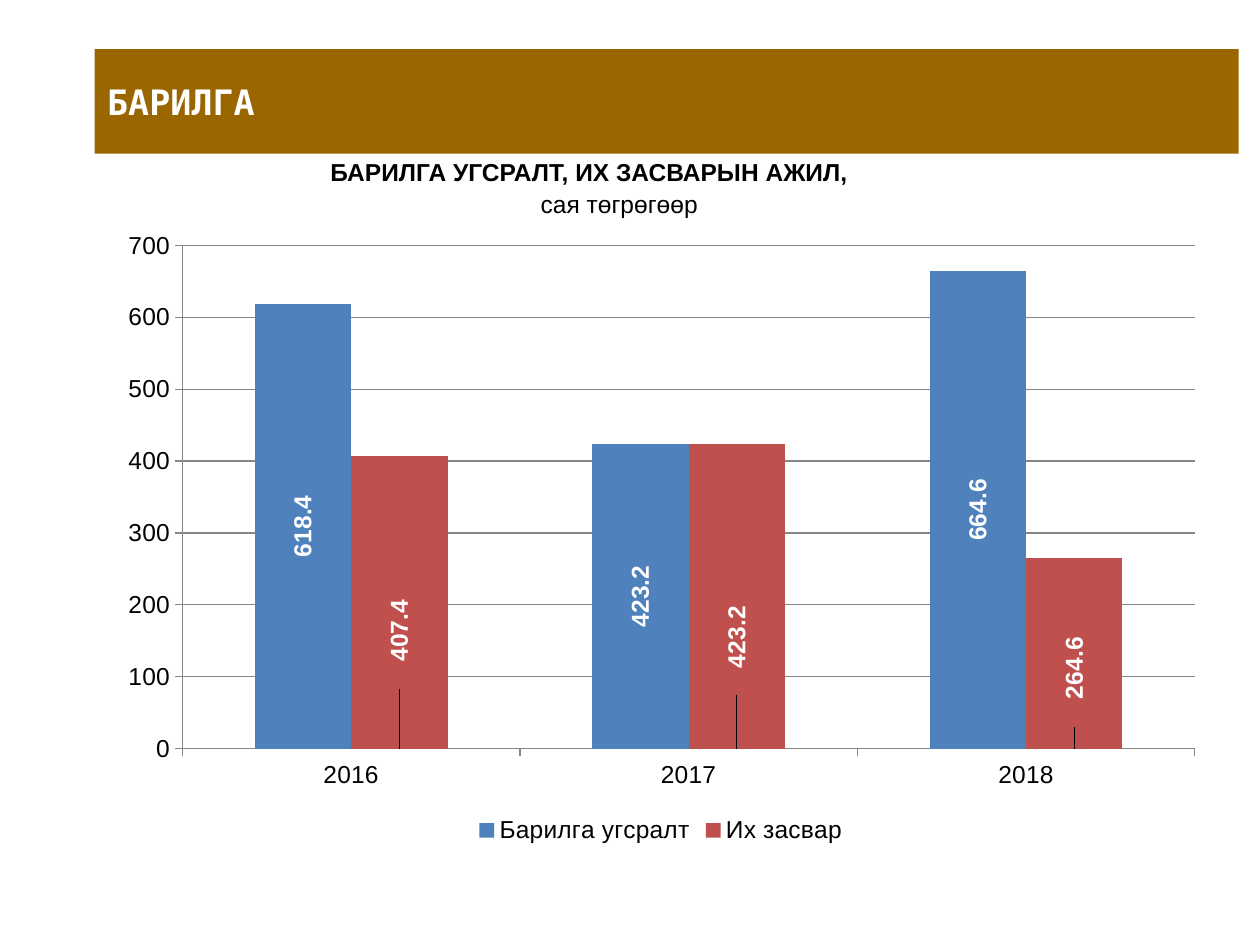
from lxml.etree import SubElement
from pptx import Presentation
from pptx.chart.data import CategoryChartData
from pptx.dml.color import RGBColor
from pptx.enum.chart import XL_CHART_TYPE, XL_LABEL_POSITION, XL_LEGEND_POSITION, XL_TICK_MARK
from pptx.enum.text import MSO_ANCHOR, MSO_AUTO_SIZE, PP_ALIGN
from pptx.oxml import parse_xml
from pptx.oxml.ns import nsdecls, qn
from pptx.util import Inches, Pt

COLORS = {"bar": "996600", "white": "FFFFFF", "black": "000000", "grid": "868686"}
TITLE = "БАРИЛГА"
SUBTITLE = [("БАРИЛГА УГСРАЛТ, ИХ ЗАСВАРЫН АЖИЛ,", True, 0.48), ("сая төгрөгөөр", False, 0)]
YEARS = ["2016", "2017", "2018"]
SERIES = [
    {"name": "Барилга угсралт", "values": [618.4, 423.2, 664.6], "color": "4F81BD",
     "position": XL_LABEL_POSITION.CENTER, "shifts": [0, 0, 0]},
    {"name": "Их засвар", "values": [407.4, 423.2, 264.6], "color": "C0504D",
     "position": XL_LABEL_POSITION.INSIDE_BASE, "shifts": [-0.13, -0.12, -0.07]},
]
PLOT_AREA = {"x": 0.07, "y": 0.04, "w": 0.91, "h": 0.8}


def color(name):
    return RGBColor.from_string(COLORS[name])


def style(font, size, name, fill, bold):
    font.size, font.name, font.bold = Pt(size), name, bold
    font.color.rgb = color(fill)


def place(shape, left, top, width, height):
    shape.left, shape.top = Inches(left), Inches(top)
    shape.width, shape.height = Inches(width), Inches(height)


def manual_layout(parts, inner=False):
    layout = parse_xml(f"<c:layout {nsdecls('c')}><c:manualLayout/></c:layout>")
    settings = {"layoutTarget": "inner", "xMode": "edge", "yMode": "edge"} if inner else {}
    for tag, value in {**settings, **parts}.items():
        SubElement(layout[0], qn(f"c:{tag}")).set("val", str(value))
    return layout


def add_title(page):
    title = page.shapes.title
    place(title, 0.75, 0.39, 9.08, 0.83)
    title.fill.solid()
    title.fill.fore_color.rgb = color("bar")
    frame = title.text_frame
    frame.auto_size, frame.vertical_anchor = MSO_AUTO_SIZE.NONE, MSO_ANCHOR.MIDDLE
    para = frame.paragraphs[0]
    para.alignment = PP_ALIGN.JUSTIFY
    span = para.add_run()
    span.text = TITLE
    style(span.font, 20, "DejaVu Sans Mono", "white", True)


def add_subtitle(page):
    box = page.placeholders[1]
    place(box, 2.5, 1.08, 4.83, 0.7)
    frame = box.text_frame
    frame.auto_size, frame.vertical_anchor = MSO_AUTO_SIZE.NONE, MSO_ANCHOR.BOTTOM
    for index, (text, bold, right_margin) in enumerate(SUBTITLE):
        para = frame.add_paragraph() if index else frame.paragraphs[0]
        properties = para._p.get_or_add_pPr()
        for key, value in (("marL", 0), ("marR", Inches(right_margin)), ("indent", 0)):
            properties.set(key, str(value))
        SubElement(properties, qn("a:buNone"))
        para.alignment, para.space_before = PP_ALIGN.CENTER, Pt(index)
        span = para.add_run()
        span.text = text
        style(span.font, 14, "Arial", "black", bold)


def add_labels(series, entry):
    for index, shift in enumerate(entry["shifts"]):
        label = series.points[index].data_label
        label.position = entry["position"]
        style(label.font, 14, "Arial", "white", True)
        element = series._element.xpath("c:dLbls/c:dLbl")[index]
        if shift:
            element.insert(1, manual_layout({"x": 0, "y": shift}))
    for body in series._element.xpath("c:dLbls//a:bodyPr"):
        body.set("rot", "-5400000")
        body.set("vert", "horz")


def add_chart(page):
    data = CategoryChartData()
    data.categories = YEARS
    for entry in SERIES:
        data.add_series(entry["name"], entry["values"])
    chart = page.shapes.add_chart(XL_CHART_TYPE.COLUMN_CLUSTERED, Inches(0.83), Inches(1.75),
                                  Inches(8.83), Inches(4.99), data).chart
    style(chart.font, 14, "Arial", "black", False)
    chart.has_title = False
    chart.has_legend = True
    chart.legend.position = XL_LEGEND_POSITION.BOTTOM
    chart.legend.include_in_layout = False
    area = chart._chartSpace.chart.plotArea
    for old in area.xpath("c:layout"):
        area.remove(old)
    area.insert(0, manual_layout(PLOT_AREA, inner=True))
    scale = chart.value_axis
    scale.minimum_scale, scale.maximum_scale, scale.major_unit = 0, 700, 100
    scale.has_major_gridlines = True
    for axis in (chart.category_axis, scale):
        axis.major_tick_mark = XL_TICK_MARK.OUTSIDE
    for line in (chart.category_axis.format.line, scale.format.line, scale.major_gridlines.format.line):
        line.color.rgb, line.width = color("grid"), Pt(0.75)
    plot = chart.plots[0]
    plot.gap_width, plot.overlap, plot.vary_by_categories = 150, 0, False
    for series, entry in zip(plot.series, SERIES):
        series.format.fill.solid()
        series.format.fill.fore_color.rgb = RGBColor.from_string(entry["color"])
        add_labels(series, entry)


def main():
    """Build the construction slide and save it."""
    deck = Presentation()
    deck.slide_width, deck.slide_height = Inches(10), Inches(7.5)
    page = deck.slides.add_slide(deck.slide_layouts[1])
    add_title(page)
    add_subtitle(page)
    add_chart(page)
    deck.save("out.pptx")


if __name__ == "__main__":
    main()
